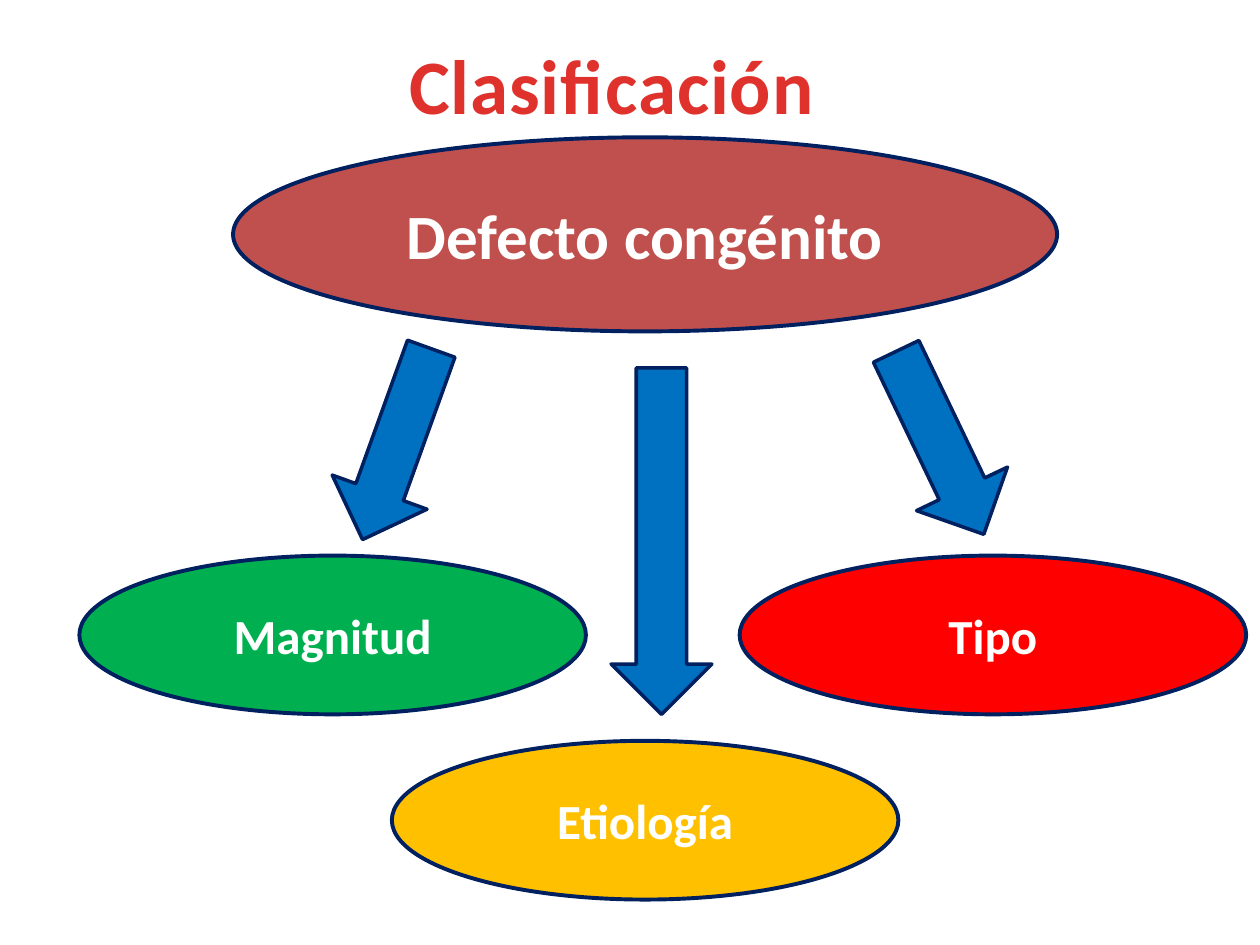
from pptx import Presentation
from pptx.dml.color import RGBColor
from pptx.enum.shapes import MSO_SHAPE as Shape
from pptx.enum.text import MSO_ANCHOR as Anchor, PP_ALIGN as Align
from pptx.util import Inches, Pt

FONT = "Calibri"
WHITE = RGBColor(0xFF, 0xFF, 0xFF)
NAVY = RGBColor(0x00, 0x20, 0x60)
BLUE = RGBColor(0x00, 0x70, 0xC0)
BRICK = RGBColor(0xC0, 0x50, 0x4D)
GREEN = RGBColor(0x00, 0xB0, 0x50)
AMBER = RGBColor(0xFF, 0xC0, 0x00)
RED = RGBColor(0xFF, 0x00, 0x00)
TITLE_RED = RGBColor(0xE0, 0x32, 0x2D)

# Content: places are in inches
TITLE = "Clasificación"
ROOT_SIZE, CLASS_SIZE = (6.54, 1.54), (4.02, 1.26)
# text, left, top, size, font size, fill
CONCEPTS = [
    ("Defecto congénito", 1.85, 1.09, ROOT_SIZE, 36, BRICK),
    ("Magnitud", 0.63, 4.41, CLASS_SIZE, 28, GREEN),
    ("Etiología", 3.11, 5.88, CLASS_SIZE, 28, AMBER),
    ("Tipo", 5.87, 4.41, CLASS_SIZE, 28, RED),
]
ARROW_WIDTH = 0.8
# left, top, length, rotation
ARROWS = [
    (2.75, 2.72, 1.61, 19.8),
    (4.85, 2.92, 2.75, 0),
    (7.06, 2.71, 1.61, 334.4),
]


def add_outlined(slide, kind, left, top, width, height, fill, line_width):
    shape = slide.shapes.add_shape(
        kind, Inches(left), Inches(top), Inches(width), Inches(height))
    shape.shadow.inherit = False
    shape.fill.solid()
    shape.fill.fore_color.rgb = fill
    shape.line.color.rgb = NAVY
    shape.line.width = Pt(line_width)
    return shape


def write(shape, text, size, color, anchor):
    frame = shape.text_frame
    frame.text = text
    frame.vertical_anchor = anchor
    paragraph = frame.paragraphs[0]
    paragraph.alignment = Align.CENTER
    font = paragraph.font
    font.name, font.size, font.bold = FONT, Pt(size), True
    font.color.rgb = color


def main():
    deck = Presentation()
    deck.slide_width, deck.slide_height = Inches(10), Inches(7.5)
    slide = deck.slides.add_slide(deck.slide_layouts[5])

    # Title, with slightly open letter spacing
    title = slide.shapes.title
    title.left, title.top = Inches(3.13), Inches(0.25)
    title.width, title.height = Inches(3.45), Inches(0.84)
    write(title, TITLE, 44, TITLE_RED, Anchor.TOP)
    title.text_frame.word_wrap = False
    title.text_frame.paragraphs[0].runs[0]._r.get_or_add_rPr().set("spc", "50")

    # Ellipses: the defect and its three classifications
    for text, left, top, (width, height), size, fill in CONCEPTS:
        concept = add_outlined(
            slide, Shape.OVAL, left, top, width, height, fill, 2.25)
        write(concept, text, size, WHITE, Anchor.MIDDLE)

    # Arrows from the defect to each classification
    for left, top, length, rotation in ARROWS:
        arrow = add_outlined(
            slide, Shape.DOWN_ARROW, left, top, ARROW_WIDTH, length, BLUE, 2)
        arrow.rotation = rotation

    deck.save("out.pptx")


if __name__ == "__main__":
    main()
